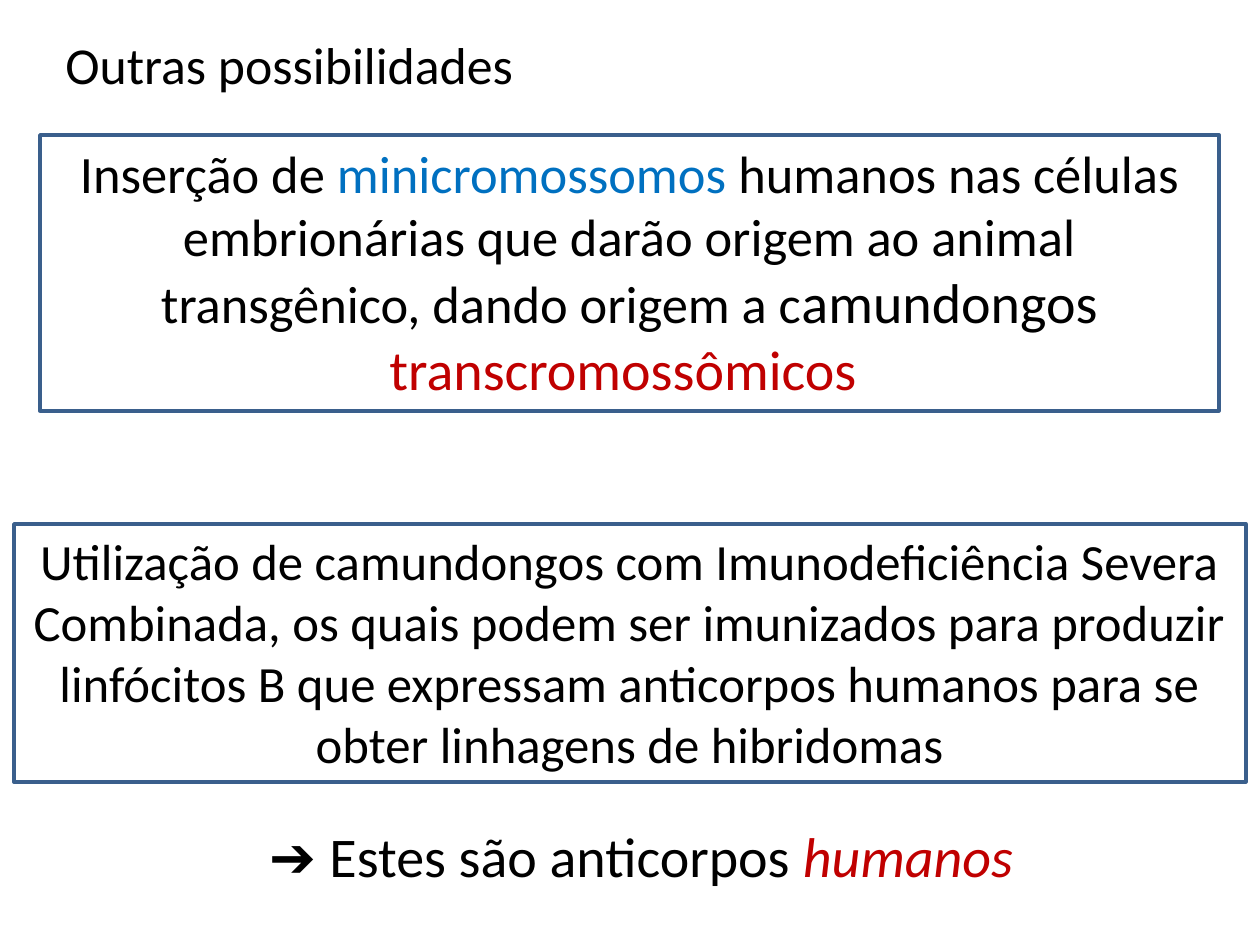
from pptx import Presentation
from pptx.dml.color import RGBColor
from pptx.enum.shapes import MSO_SHAPE
from pptx.enum.text import MSO_ANCHOR, PP_ALIGN
from pptx.util import Emu, Pt

RECT = MSO_SHAPE.RECTANGLE
TOP = MSO_ANCHOR.TOP
LEFT, MID = PP_ALIGN.LEFT, PP_ALIGN.CENTER
BLACK, BLUE, RED, EDGE = "000000", "0070C0", "C00000", "3A5F8C"


def px(n):
    return Emu(round(n * 914400 / 126))


def color(code):
    return RGBColor.from_string(code)


class Deck:
    font = "Calibri"
    edge = 2

    def __init__(self, wide, high):
        self.prs = Presentation()
        self.prs.slide_width, self.prs.slide_height = px(wide), px(high)
        self.slide = self.prs.slides.add_slide(self.prs.slide_layouts[6])

    def fill(self, shape, runs, align):
        frame = shape.text_frame
        frame.word_wrap = True
        frame.vertical_anchor = TOP
        para = frame.paragraphs[0]
        para.alignment = align
        for text, size, code, slant in runs:
            run = para.add_run()
            run.text = text
            run.font.name = self.font
            run.font.size = Pt(size)
            run.font.italic = slant
            run.font.color.rgb = color(code)

    def text(self, area, runs, align=LEFT):
        shape = self.slide.shapes.add_textbox(*map(px, area))
        self.fill(shape, runs, align)

    def box(self, area, runs):
        shape = self.slide.shapes.add_shape(RECT, *map(px, area))
        shape.shadow.inherit = False
        shape.fill.background()
        shape.line.color.rgb = color(EDGE)
        shape.line.width = Pt(self.edge)
        self.fill(shape, runs, MID)


def main():
    deck = Deck(1260, 945)
    deck.text((53, 27, 1134, 71), [("Outras possibilidades", 29.6, BLACK, False)])
    deck.box((40, 135, 1179, 276), [
        ("Inserção de ", 30, BLACK, False),
        ("minicromossomos", 30, BLUE, False),
        (" humanos nas células embrionárias que darão origem ao animal "
         "transgênico, dando origem a c", 30, BLACK, False),
        ("amundongos ", 32, BLACK, False),
        ("transcromossômicos ", 32, RED, False),
    ])
    deck.text((53, 815, 1177, 81), [
        ("➔ Estes são anticorpos ", 32, BLACK, False),
        ("humanos", 32, RED, True),
    ], MID)
    deck.box((14, 524, 1232, 258), [
        ("Utilização de camundongos com Imunodeficiência Severa Combinada, "
         "os quais podem ser imunizados para produzir linfócitos B que "
         "expressam anticorpos humanos para se obter linhagens de hibridomas",
         29, BLACK, False),
    ])
    deck.prs.save("out.pptx")


if __name__ == "__main__":
    main()
